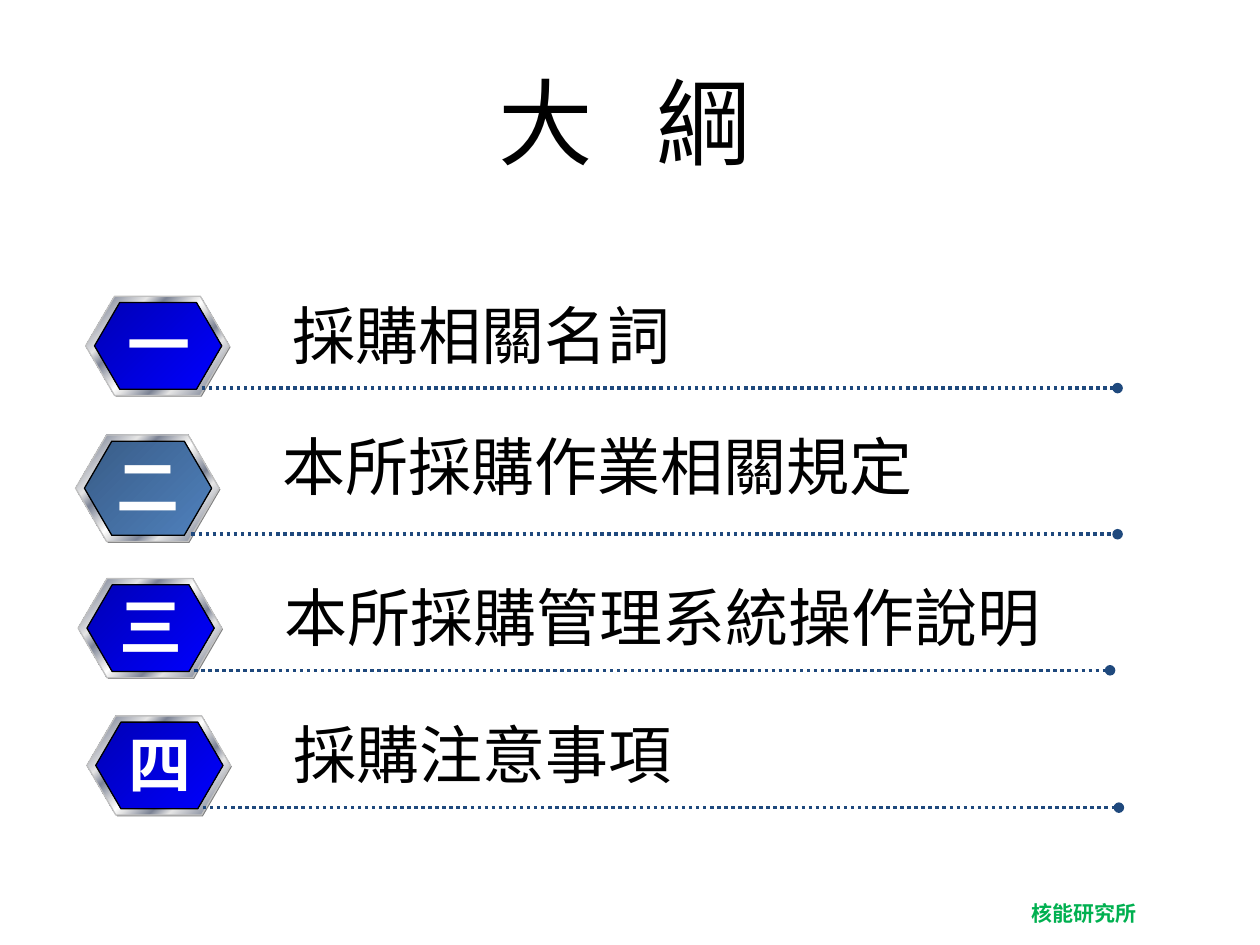
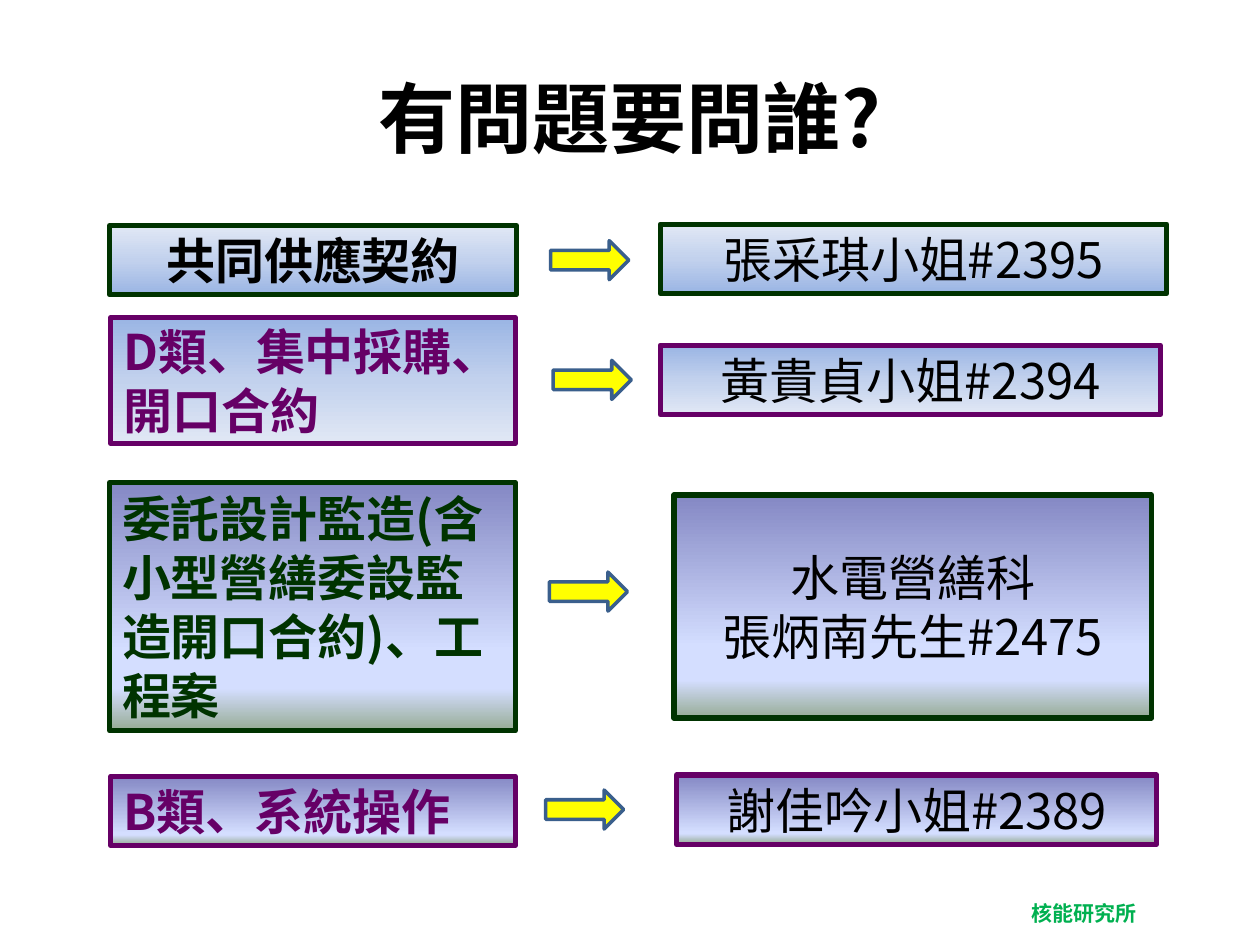
from typing import Any, NamedTuple

import pptx
import pptx.dml.color
import pptx.enum.dml
import pptx.enum.shapes
import pptx.enum.text
import pptx.oxml
import pptx.oxml.ns
import pptx.util
from lxml import etree

Inches = pptx.util.Inches
RGB = pptx.dml.color.RGBColor
Shape = pptx.enum.shapes.MSO_SHAPE
Align = pptx.enum.text.PP_ALIGN
Anchor = pptx.enum.text.MSO_ANCHOR
qn = pptx.oxml.ns.qn

NOTO = "Noto Sans CJK SC"
ARIAL = "Arial"
BLACK = RGB(0x00, 0x00, 0x00)
WHITE = RGB(0xFF, 0xFF, 0xFF)
GREY = RGB(0x80, 0x80, 0x80)
SILVER = RGB(0xC0, 0xC0, 0xC0)
NAVY = RGB(0x1F, 0x49, 0x7D)
STEEL = RGB(0x3A, 0x5F, 0x8C)
YELLOW = RGB(0xFF, 0xFF, 0x00)
GREEN = RGB(0x00, 0xB0, 0x50)
FOREST = RGB(0x00, 0x33, 0x00)
PURPLE = RGB(0x66, 0x00, 0x66)


class Grad(NamedTuple):
    angle: int  # clockwise degrees
    stops: tuple[tuple[int, str], ...]


PALE = ((0, "9AB5E4"), (50, "C2D1ED"), (100, "E1E8F5"))
RISE = Grad(270, PALE)
FALL = Grad(90, PALE)
DUSK = Grad(90, ((0, "8488C4"), (68, "D4DEFF"), (83, "D4DEFF"), (100, "96AB94")))
DAWN = Grad(90, ((0, "8488C4"), (83, "D4DEFF"), (85, "D4DEFF"), (100, "96AB94")))
BLUE = Grad(45, ((0, "0000B6"), (100, "0000FF")))
SLATE = Grad(45, ((0, "395C87"), (100, "4F81BD")))
METAL = Grad(45, (
    (0, "E6E6E6"), (8, "7D8496"), (26, "E6E6E6"), (34, "7D8496"),
    (46, "E6E6E6"), (50, "FFFFFF"), (54, "E6E6E6"), (66, "7D8496"),
    (74, "E6E6E6"), (92, "7D8496"), (100, "E6E6E6")))


class Rect(NamedTuple):
    x: float
    y: float
    w: float
    h: float

    def size(self) -> list[int]:
        return [Inches(side) for side in self]


class Style(NamedTuple):
    size: int
    font: str = NOTO
    color: RGB = BLACK
    bold: bool = False
    align: Align = Align.LEFT


class Topic(NamedTuple):
    num: str
    text: str
    x: float
    y: float
    end: float
    h: float = 0.79
    lift: float = 0.05  # label height above the badge
    face: Grad = BLUE


class Pair(NamedTuple):
    task: str
    left: Rect
    ink: RGB
    align: Align
    who: str
    right: Rect
    fill: Grad
    edge: RGB
    arrow: tuple[float, float]


TOPICS = (
    Topic("一", "採購相關名詞", 0.68, 2.35, 8.87),
    Topic("二", "本所採購作業相關規定", 0.6, 3.45, 8.87, 0.85, 0.11, SLATE),
    Topic("三", "本所採購管理系統操作說明", 0.62, 4.59, 8.81),
    Topic("四", "採購注意事項", 0.69, 5.68, 8.88),
)
PAIRS = (
    Pair("共同供應契約", Rect(0.87, 1.79, 3.23, 0.55), BLACK, Align.CENTER,
         "張采琪小姐#2395", Rect(5.24, 1.78, 4.02, 0.55),
         RISE, FOREST, (4.37, 1.91)),
    Pair("D類、集中採購、\n開口合約", Rect(0.88, 2.52, 3.21, 1), PURPLE, Align.LEFT,
         "黃貴貞小姐#2394", Rect(5.24, 2.74, 3.97, 0.55),
         FALL, PURPLE, (4.39, 2.86)),
    Pair("委託設計監造(含小型營繕委設監造開口合約)、工程案",
         Rect(0.87, 3.83, 3.22, 1.97), FOREST, Align.LEFT,
         "水電營繕科\n張炳南先生#2475", Rect(5.35, 3.93, 3.79, 1.77),
         DUSK, FOREST, (4.36, 4.54)),
    Pair("B類、系統操作", Rect(0.88, 6.16, 3.21, 0.55), PURPLE, Align.LEFT,
         "謝佳吟小姐#2389", Rect(5.37, 6.15, 3.81, 0.55),
         DAWN, PURPLE, (4.33, 6.27)),
)


def write(frame: Any, text: str, style: Style) -> None:
    frame.text = text
    for para in frame.paragraphs:
        para.alignment = style.align
        for run in para.runs:
            font = run.font
            font.size = pptx.util.Pt(style.size)
            font.name = style.font
            font.bold = style.bold
            font.color.rgb = style.color
            east = etree.SubElement(font._element, qn("a:ea"))
            east.set("typeface", NOTO)


def paint(shape: Any, grad: Grad) -> None:
    shape.fill.gradient()
    shape.fill.gradient_angle = 360 - grad.angle
    stops = shape.element.spPr.find(qn("a:gradFill")).find(qn("a:gsLst"))
    for old in list(stops):
        stops.remove(old)
    for place, color in grad.stops:
        stop = etree.SubElement(stops, qn("a:gs"), pos=str(place * 1000))
        etree.SubElement(stop, qn("a:srgbClr"), val=color)


def draw(shapes: Any, kind: Shape, rect: Rect, fill: Grad | RGB,
         edge: RGB | None = None, width: float = 0.75) -> Any:
    shape = shapes.add_shape(kind, *rect.size())
    shape.shadow.inherit = False
    if isinstance(fill, Grad):
        paint(shape, fill)
    else:
        shape.fill.solid()
        shape.fill.fore_color.rgb = fill
    if edge is None:
        shape.line.fill.background()
    else:
        shape.line.color.rgb = edge
        shape.line.width = pptx.util.Pt(width)
    return shape


def label(shapes: Any, text: str, rect: Rect, style: Style, wrap: bool = False) -> Any:
    frame = shapes.add_textbox(*rect.size()).text_frame
    frame.word_wrap = wrap
    write(frame, text, style)
    return frame


def start(deck: Any, text: str, rect: Rect, style: Style) -> Any:
    """Add a slide with its title and the institute footer."""
    slide = deck.slides.add_slide(deck.slide_layouts[5])
    title = slide.shapes.title
    title.left, title.top, title.width, title.height = rect.size()
    title.text_frame.vertical_anchor = Anchor.MIDDLE
    write(title.text_frame, text, style)
    foot = label(slide.shapes, "核能研究所", Rect(8.1, 7.11, 1.02, 0.29),
                 Style(12, color=GREEN, bold=True))
    foot.margin_left = foot.margin_right = Inches(0.09)
    foot.margin_top = foot.margin_bottom = Inches(0.04)
    return slide


def rule(shapes: Any, x: float, y: float, end: float) -> None:
    """Draw a dotted line that ends in a dot."""
    line = shapes.add_connector(pptx.enum.shapes.MSO_CONNECTOR.STRAIGHT,
                                Inches(x), Inches(y), Inches(end), Inches(y))
    line.line.color.rgb = NAVY
    line.line.width = pptx.util.Pt(2)
    line.line.dash_style = pptx.enum.dml.MSO_LINE.ROUND_DOT
    props = line.element.spPr
    etree.SubElement(props.find(qn("a:ln")), qn("a:tailEnd"), type="oval")
    etree.SubElement(props, qn("a:effectLst"))


def entry(slide: Any, topic: Topic) -> None:
    shapes = slide.shapes.add_group_shape().shapes
    x, y, h = topic.x, topic.y, topic.h
    layers = (
        (Rect(x + 0.01, y + 0.01, 1.14, h), GREY, None),
        (Rect(x, y, 1.14, h), METAL, SILVER),
        (Rect(x + 0.07, y + 0.05, 1.01, h - 0.1), topic.face, BLACK),
    )
    for rect, fill, edge in layers:
        badge = draw(shapes, Shape.HEXAGON, rect, fill, edge)
        badge.adjustments[0] = 0.29
        badge.adjustments[1] = 1.15
    rule(shapes, x + 0.92, y + h - 0.06, topic.end)
    wide = 0.5 * len(topic.text) + 0.23
    label(shapes, topic.text, Rect(x + 1.54, y - topic.lift, wide, 0.71),
          Style(36, ARIAL))
    label(shapes, topic.num, Rect(x + 0.23, y + h / 2 - 0.37, 0.69, 0.71),
          Style(36, ARIAL, WHITE, True, Align.CENTER), wrap=True)


def match(slide: Any, pair: Pair) -> None:
    """Draw a task, an arrow and the person to ask."""
    sides = (
        (pair.task, pair.left, Style(28, color=pair.ink, bold=True, align=pair.align)),
        (pair.who, pair.right, Style(28, align=Align.CENTER)),
    )
    for text, rect, style in sides:
        box = draw(slide.shapes, Shape.RECTANGLE, rect, pair.fill, pair.edge, 3)
        box.text_frame.word_wrap = True
        box.text_frame.vertical_anchor = Anchor.MIDDLE
        write(box.text_frame, text, style)
    draw(slide.shapes, Shape.RIGHT_ARROW, Rect(*pair.arrow, 0.62, 0.31),
         YELLOW, STEEL, 2)


def main() -> None:
    deck = pptx.Presentation()
    deck.slide_width, deck.slide_height = Inches(10), Inches(7.5)

    slide = start(deck, "大 綱", Rect(1.81, 0.44, 6.3, 1.03),
                  Style(54, align=Align.CENTER))
    run = slide.shapes.title.text_frame.paragraphs[0].runs[0]
    run.font._element.set("spc", "1200")  # widens the gap between the two characters
    for topic in TOPICS:
        entry(slide, topic)

    slide = start(deck, "有問題要問誰?", Rect(0.5, 0.3, 9, 1.25),
                  Style(44, bold=True, align=Align.CENTER))
    for pair in PAIRS:
        match(slide, pair)

    deck.save("out.pptx")


if __name__ == "__main__":
    main()
